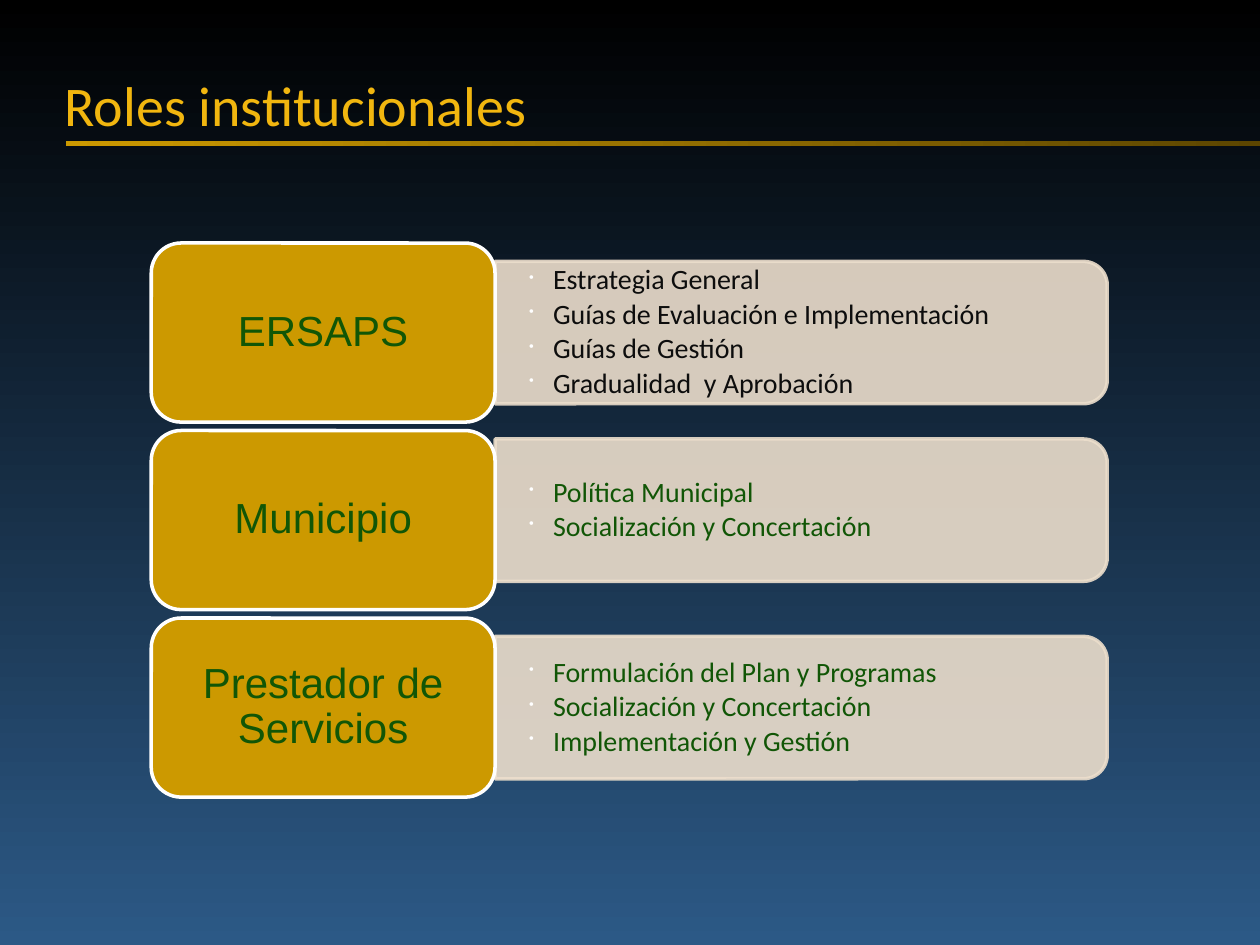
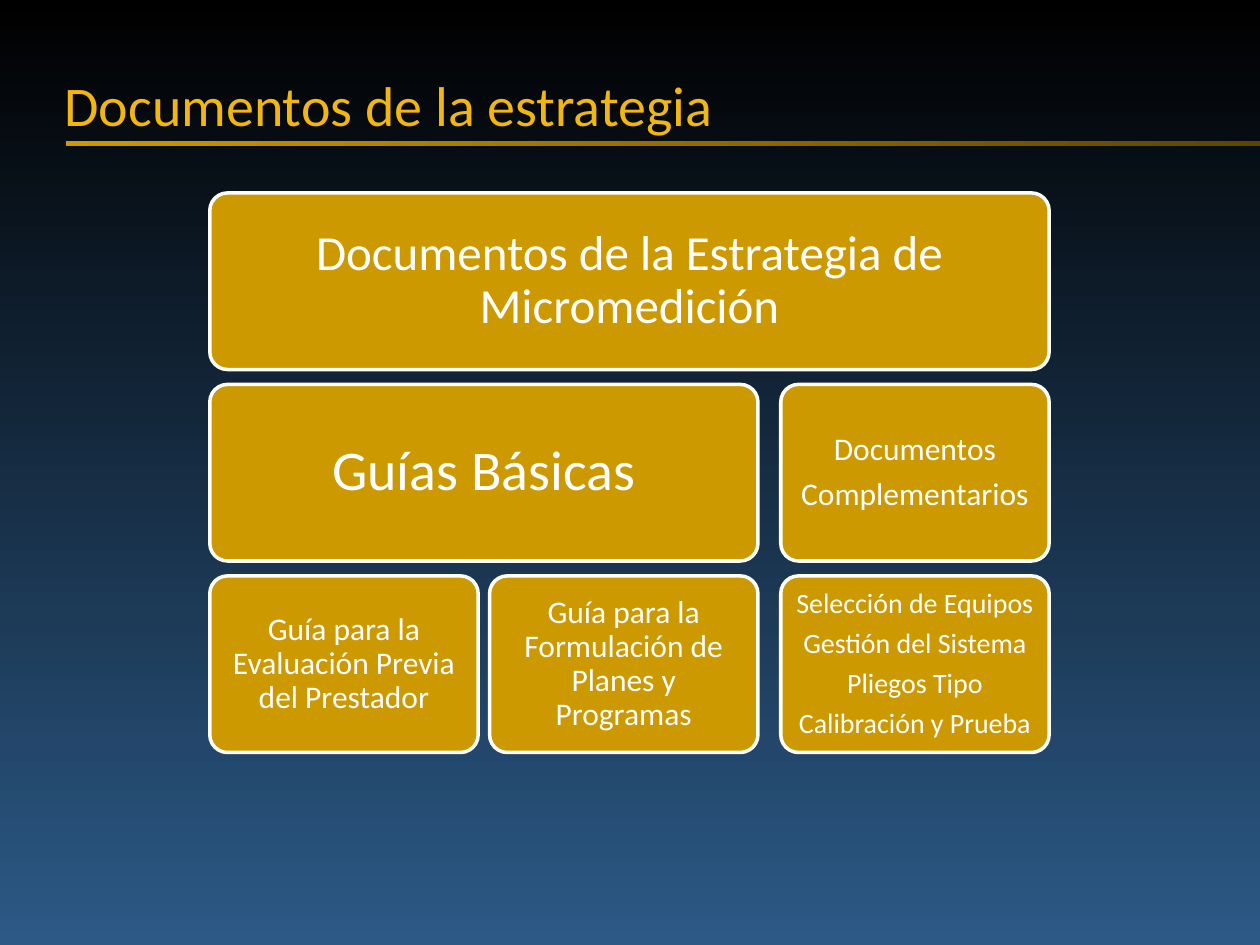
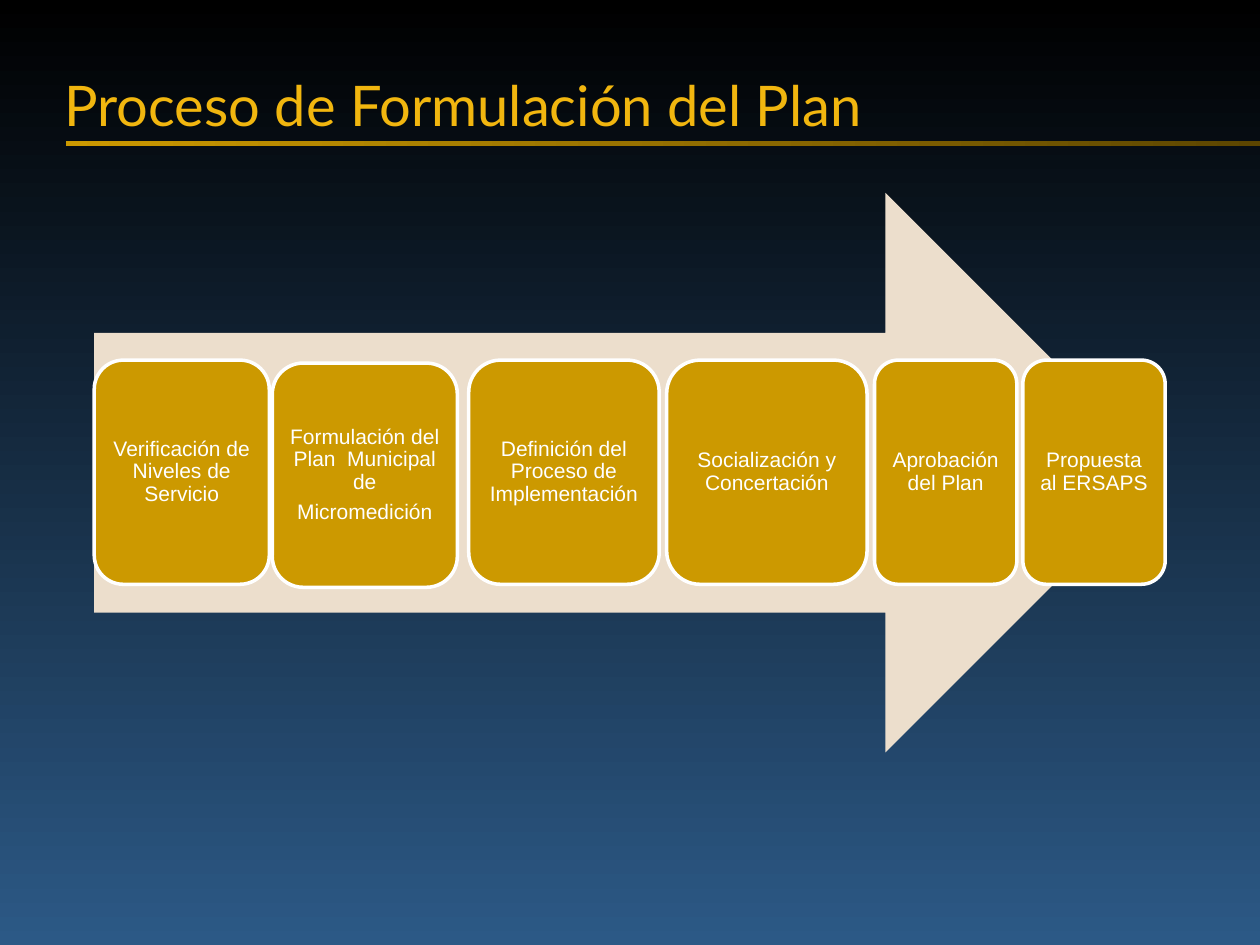
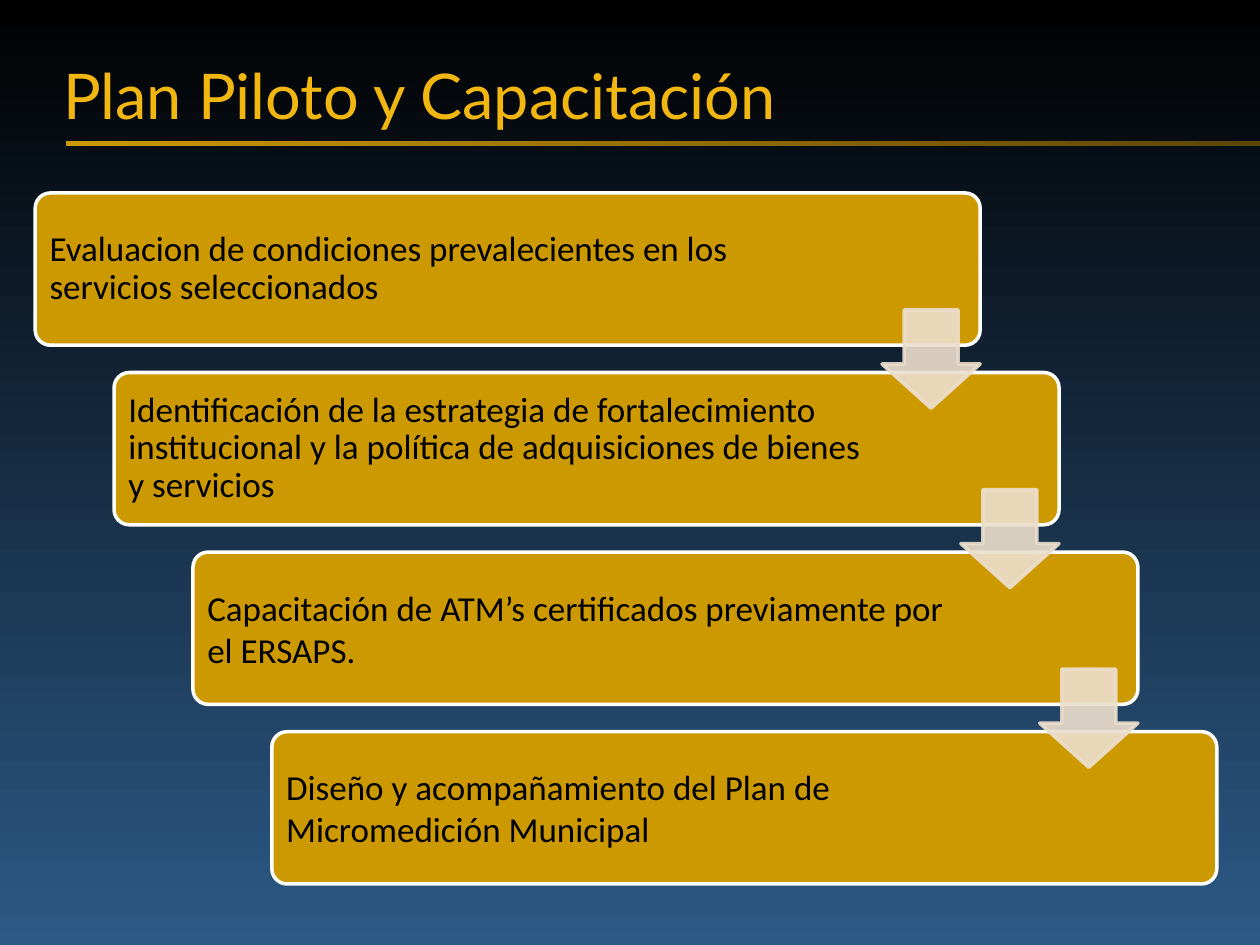
from dataclasses import dataclass

import pptx
import pptx.dml.color
import pptx.enum.shapes
import pptx.enum.text
import pptx.oxml
import pptx.oxml.ns
import pptx.util
from lxml import etree

Cm = pptx.util.Cm
Pt = pptx.util.Pt
SHAPE = pptx.enum.shapes.MSO_SHAPE
ALIGN = pptx.enum.text.PP_ALIGN
qn = pptx.oxml.ns.qn


@dataclass(frozen=True)
class Theme:
    # Colours
    night: str = "000000"
    blue: str = "2C5986"
    gold: str = "CC9900"
    dark_gold: str = "5C4500"
    title: str = "F1B60F"
    sand: str = "ECDECC"
    white: str = "FFFFFF"
    black: str = "000000"
    ink: str = "0D0D0D"
    green: str = "115606"
    # Fonts
    body_font: str = "Calibri"
    label_font: str = "Arial"
    title_font: str = "Lato"
    # Type sizes and line width in points
    title_size: int = 32
    large_title_size: int = 36
    heading_size: int = 28
    label_size: int = 24
    step_size: int = 20
    box_size: int = 18
    list_size: int = 16
    small_size: int = 12
    outline: int = 2


def rgb(code):
    return pptx.dml.color.RGBColor.from_string(code)


def blend(fill, start, end, angle):
    """Two-colour linear gradient; the angle runs counter-clockwise."""
    fill.gradient()
    fill.gradient_angle = angle
    for stop, color, position in zip(fill.gradient_stops, (start, end), (0, 1)):
        stop.color.rgb = rgb(color)
        stop.position = position


class Deck:
    def __init__(self, theme):
        self.theme = theme
        self.presentation = pptx.Presentation()
        self.presentation.slide_width = Cm(25.4)
        self.presentation.slide_height = Cm(19.05)
        background = self.presentation.slide_master.background
        blend(background.fill, theme.night, theme.blue, 270)
        self.slide = None

    def new_slide(self, title, font, size=None, frame=(0.84, 0.94, 24.56, 2.51), indent=0.46):
        """Title-only slide with the gold rule under its title."""
        layout = self.presentation.slide_layouts[5]
        self.slide = self.presentation.slides.add_slide(layout)
        rule = self.slide.shapes.add_shape(
            SHAPE.RECTANGLE, Cm(1.33), Cm(2.84), Cm(24.07), Cm(0.11))
        rule.shadow.inherit = False
        rule.line.fill.background()
        blend(rule.fill, self.theme.gold, self.theme.dark_gold, 0)
        heading = self.slide.shapes.title
        heading.left, heading.top, heading.width, heading.height = map(Cm, frame)
        self.set_text(heading, [title], font, size or self.theme.title_size, self.theme.title,
                      align=ALIGN.LEFT, spacing=0.85, after=0, insets=(indent, 0.13, 0.25, 0.13))

    def shape(self, kind, left, top, width, height, fill, line=None,
              adjustments=(), rotation=0, opacity=None):
        shape = self.slide.shapes.add_shape(kind, Cm(left), Cm(top), Cm(width), Cm(height))
        shape.shadow.inherit = False
        shape.rotation = rotation
        for index, value in enumerate(adjustments):
            shape.adjustments[index] = value
        shape.fill.solid()
        shape.fill.fore_color.rgb = rgb(fill)
        if line:
            shape.line.color.rgb = rgb(line)
            shape.line.width = Pt(self.theme.outline)
        else:
            shape.line.fill.background()
        if opacity:
            for color in shape.element.spPr.iter(qn("a:srgbClr")):
                etree.SubElement(color, qn("a:alpha"), val=str(opacity * 1000))
        return shape

    def box(self, left, top, width, height, paragraphs, font, size, color,
            corner=None, **text_options):
        """Gold rounded box holding its own text."""
        shape = self.shape(SHAPE.ROUNDED_RECTANGLE, left, top, width, height,
                           self.theme.gold, self.theme.white, [corner] if corner else [])
        self.set_text(shape, paragraphs, font, size, color, **text_options)

    def side_panel(self, left, middle, width, height):
        """Translucent panel rounded on its right side only."""
        self.shape(SHAPE.ROUND_2_SAME_RECTANGLE, left + (width - height) / 2,
                   middle - width / 2, height, width, self.theme.sand, self.theme.sand,
                   rotation=90, opacity=90)

    def bullet_list(self, left, top, width, height, items, color):
        text_box = self.slide.shapes.add_textbox(Cm(left), Cm(top), Cm(width), Cm(height))
        self.set_text(text_box, items, self.theme.body_font, self.theme.list_size, color,
                      align=ALIGN.LEFT, after=0.15, insets=(0.69, 0.36, 0.69, 0.36),
                      bullets=True)

    def down_arrow(self, left, top, side):
        self.shape(SHAPE.DOWN_ARROW, left, top, side, side, self.theme.sand, self.theme.sand,
                   adjustments=(0.55, 0.45), opacity=90)

    def set_text(self, shape, paragraphs, font, size, color, align=ALIGN.CENTER,
                 spacing=0.9, after=0.35, insets=(0.18, 0.18, 0.18, 0.18), bullets=False):
        """Fill a shape with paragraphs; after is a share of the type size."""
        frame = shape.text_frame
        frame.word_wrap = True
        frame.auto_size = pptx.enum.text.MSO_AUTO_SIZE.NONE
        frame.vertical_anchor = pptx.enum.text.MSO_ANCHOR.MIDDLE
        (frame.margin_left, frame.margin_top,
         frame.margin_right, frame.margin_bottom) = map(Cm, insets)
        for index, text in enumerate(paragraphs):
            paragraph = frame.add_paragraph() if index else frame.paragraphs[0]
            if bullets:
                self.add_bullet(paragraph)
            paragraph.alignment = align
            paragraph.line_spacing = spacing
            paragraph.space_after = Pt(round(after * size, 1))
            run = paragraph.add_run()
            run.text = text
            run.font.name = font
            run.font.size = Pt(size)
            run.font.color.rgb = rgb(color)

    def add_bullet(self, paragraph):
        properties = paragraph._p.get_or_add_pPr()
        properties.set("marL", str(Cm(0.48)))
        properties.set("indent", str(-Cm(0.48)))
        bullet_color = etree.SubElement(properties, qn("a:buClr"))
        etree.SubElement(bullet_color, qn("a:srgbClr"), val=self.theme.white)
        etree.SubElement(properties, qn("a:buSzPct"), val="50000")
        etree.SubElement(properties, qn("a:buChar"), char="•")


def add_roles(deck):
    theme = deck.theme
    deck.new_slide("Roles institucionales", theme.body_font)
    # Institution, list colour, vertical shift of its panel, duties
    roles = [
        ("ERSAPS", theme.ink, 0,
         ["Estrategia General", "Guías de Evaluación e Implementación",
          "Guías de Gestión", "Gradualidad  y Aprobación"]),
        ("Municipio", theme.green, -0.2,
         ["Política Municipal", "Socialización y Concertación"]),
        ("Prestador de Servicios", theme.green, 0,
         ["Formulación del Plan y Programas", "Socialización y Concertación",
          "Implementación y Gestión"]),
    ]
    label_left, label_width, label_height = 3.05, 6.93, 3.61
    panel_left = label_left + label_width
    panel_height, list_height = 2.87, 2.59
    for row, (institution, color, shift, duties) in enumerate(roles):
        top = 4.9 + row * 3.78
        middle = top + label_height / 2 + shift
        deck.side_panel(panel_left, middle, 12.34, panel_height)
        deck.bullet_list(panel_left, middle - list_height / 2, 12.22, list_height, duties, color)
        deck.box(label_left, top, label_width, label_height, [institution],
                 theme.label_font, theme.label_size, theme.green,
                 insets=(0.25, 0.13, 0.25, 0.13))


def add_documents(deck):
    theme = deck.theme
    deck.new_slide("Documentos de la estrategia", theme.body_font)
    cell_width, cell_height, gap, row_step = 5.41, 3.56, 0.23, 3.86
    guides_width = 2 * cell_width + gap
    left = 4.23
    second = left + cell_width + gap
    third = left + guides_width + 2 * gap
    full_width = third + cell_width - left
    # Left, row, width, type size, inset, text
    documents = [
        (left, 0, full_width, theme.heading_size, 0.3,
         ["Documentos de la Estrategia de Micromedición"]),
        (left, 1, guides_width, theme.title_size, 0.33, ["Guías Básicas"]),
        (left, 2, cell_width, theme.box_size, 0.18,
         ["Guía para la Evaluación Previa del Prestador"]),
        (second, 2, cell_width, theme.box_size, 0.18,
         ["Guía para la Formulación de Planes y Programas"]),
        (third, 1, cell_width, theme.box_size, 0.18, ["Documentos", "Complementarios"]),
        (third, 2, cell_width, theme.list_size, 0.18,
         ["Selección de Equipos", "Gestión del Sistema", "Pliegos Tipo",
          "Calibración y Prueba"]),
    ]
    for box_left, row, width, size, inset, paragraphs in documents:
        deck.box(box_left, 3.89 + row * row_step, width, cell_height, paragraphs,
                 theme.body_font, size, theme.white, corner=0.1, insets=(inset,) * 4)


def add_process(deck):
    theme = deck.theme
    deck.new_slide("Proceso de Formulación del Plan", theme.title_font)
    deck.shape(SHAPE.RIGHT_ARROW, 1.9, 3.89, 21.59, 11.28, theme.sand)
    # Left, top, width, space after, text
    stages = [
        (1.9, 7.26, 3.53, 0.35, ["Verificación de Niveles de Servicio"]),
        (5.49, 7.32, 3.73, 0.35, ["Formulación del Plan  Municipal de", "Micromedición"]),
        (9.45, 7.26, 3.84, 0, ["Definición del Proceso de Implementación"]),
        (13.44, 7.26, 4.04, 0.35, ["Socialización y Concertación"]),
        (17.63, 7.26, 2.87, 0.35, ["Aprobación del Plan"]),
        (20.62, 7.26, 2.87, 0.35, ["Propuesta al ERSAPS"]),
    ]
    for left, top, width, after, paragraphs in stages:
        deck.box(left, top, width, 4.52, paragraphs, theme.label_font, theme.small_size,
                 theme.white, after=after, insets=(0.13,) * 4)


def add_pilot(deck):
    theme = deck.theme
    deck.new_slide("Plan Piloto y Capacitación", theme.title_font, theme.large_title_size,
                   frame=(1.02, 0.43, 24.13, 3.18), indent=0.25)
    # Text, line spacing, space after
    steps = [
        ("Evaluacion de condiciones prevalecientes en los servicios seleccionados", 0.9, 0.35),
        ("Identificación de la estrategia de fortalecimiento institucional y la política "
         "de adquisiciones de bienes y servicios", 0.9, 0.35),
        ("Capacitación de ATM’s certificados previamente por el ERSAPS.", 1.0, 0),
        ("Diseño y acompañamiento del Plan de Micromedición Municipal", 1.0, 0),
    ]
    width, height, arrow_side = 19.05, 3.07, 1.98
    corners = [(0.71 + 1.59 * index, 3.89 + 3.62 * index) for index in range(len(steps))]
    for (left, top), (text, spacing, after) in zip(corners, steps):
        deck.box(left, top, width, height, [text], theme.body_font, theme.step_size,
                 theme.black, corner=0.1, align=ALIGN.LEFT, spacing=spacing, after=after,
                 insets=(0.2, 0.2, 3.75, 0.2))
    # Arrows sit over the lower right corner of every step but the last
    for left, top in corners[:-1]:
        deck.down_arrow(left + width - arrow_side, top + 2.36, arrow_side)


def main():
    deck = Deck(Theme())
    add_roles(deck)
    add_documents(deck)
    add_process(deck)
    add_pilot(deck)
    deck.presentation.save("out.pptx")


if __name__ == "__main__":
    main()
